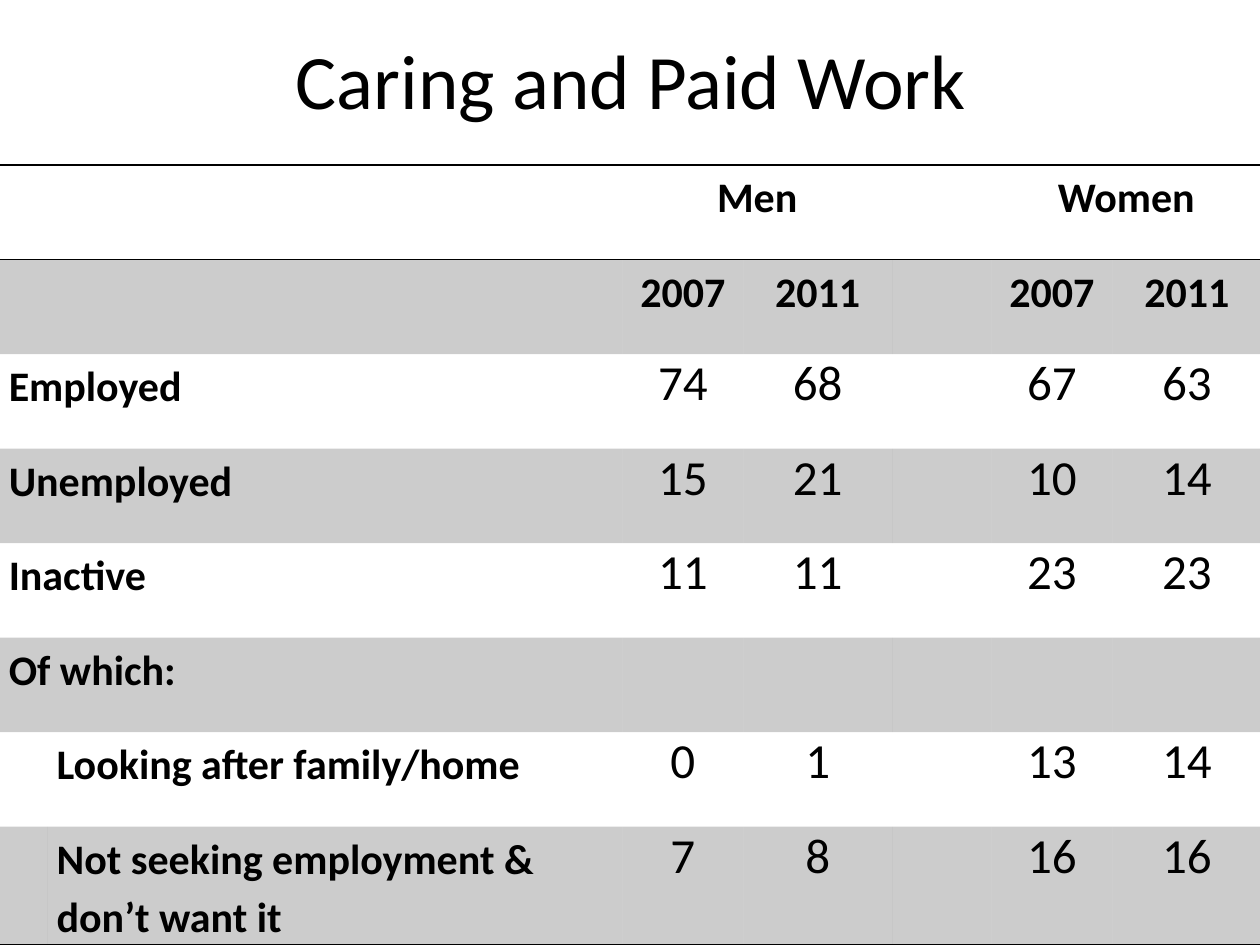
from lxml.etree import SubElement
from pptx import Presentation
from pptx.dml.color import RGBColor
from pptx.enum.text import MSO_ANCHOR as Anchor, PP_ALIGN as Align
from pptx.oxml.ns import qn
from pptx.util import Inches, Pt

BLACK = "000000"
NO_STYLE = "{2D5ABB26-0587-4C30-8999-92F81FD0307C}"
COLUMNS = [0.38, 4.56, 0.96, 1.18, 0.79, 0.96, 1.18]
HEIGHTS = [0.75] * 7 + [0.94]
ROWS = [
    ["", "", "Men", "", "", "Women", ""],
    ["", "", "2007", "2011", "", "2007", "2011"],
    ["Employed", "", "74", "68", "", "67", "63"],
    ["Unemployed", "", "15", "21", "", "10", "14"],
    ["Inactive", "", "11", "11", "", "23", "23"],
    ["Of which:", "", "", "", "", "", ""],
    ["", "Looking after family/home", "0", "1", "", "13", "14"],
    ["", "Not seeking employment & don’t want it", "7", "8", "", "16", "16"],
]
SPANS = [(0, 2), (0, 5)] + [(row, 0) for row in range(6)]


def color(value):
    return RGBColor.from_string(value)


class SlideBuilder:
    """Holds the table and text style and the slide being built."""

    def __init__(self, page, font="Calibri", ink=BLACK):
        self.page, self.font, self.ink = page, font, ink

    def add_text(self, para, text, size, bold=False, align=Align.CENTER):
        para.alignment = align
        span = para.add_run()
        span.text = text
        span.font.name, span.font.size, span.font.bold = self.font, Pt(size), bold
        span.font.color.rgb = color(self.ink)

    def title(self, text, left, top, width, height):
        box = self.page.shapes.add_textbox(*map(Inches, (left, top, width, height)))
        frame = box.text_frame
        frame.word_wrap = True
        frame.vertical_anchor = Anchor.MIDDLE
        self.add_text(frame.paragraphs[0], text, 44)

    def border(self, cell, side):
        line = SubElement(cell._tc.get_or_add_tcPr(), qn(f"a:ln{side}"), w=str(Pt(1)))
        SubElement(SubElement(line, qn("a:solidFill")), qn("a:srgbClr"), val=self.ink)

    def shade(self, cell, percent):
        cell.fill.solid()
        cell.fill.fore_color.rgb = color(self.ink)
        tint = cell._tc.tcPr.find(qn("a:solidFill")).find(qn("a:srgbClr"))
        SubElement(tint, qn("a:alpha"), val=str(percent * 1000))

    def cell_text(self, cell, text, row, column):
        cell.margin_left = cell.margin_right = Inches(0.07)
        cell.margin_top = cell.margin_bottom = 0
        para = cell.text_frame.paragraphs[0]
        heading = row < 2 or column < 2
        if heading:
            para.line_spacing, para.space_after = 1.15, Pt(10)
        align = Align.LEFT if column < 2 else Align.CENTER
        self.add_text(para, text, 24 if heading else 28, heading, align)

    def table(self, rows, left, top, columns, heights, spans):
        frame = self.page.shapes.add_table(
            len(rows), len(columns), Inches(left), Inches(top),
            Inches(sum(columns)), Inches(sum(heights)))
        grid = frame.table
        grid.first_row = grid.horz_banding = False
        grid._tbl.tblPr.find(qn("a:tableStyleId")).text = NO_STYLE
        for column, width in zip(grid.columns, columns):
            column.width = Inches(width)
        for row, height in zip(grid.rows, heights):
            row.height = Inches(height)
        for row, column in spans:
            grid.cell(row, column).merge(grid.cell(row, column + 1))
        for row, texts in enumerate(rows):
            for column, text in enumerate(texts):
                cell = grid.cell(row, column)
                if text:
                    self.cell_text(cell, text, row, column)
                if row == 0:
                    self.border(cell, "T")
                if row in (0, len(rows) - 1):
                    self.border(cell, "B")
                if row % 2:
                    self.shade(cell, 20)


def main():
    deck = Presentation()
    deck.slide_width, deck.slide_height = Inches(10), Inches(7.5)
    builder = SlideBuilder(deck.slides.add_slide(deck.slide_layouts[6]))
    builder.title("Caring and Paid Work", 0.51, 0, 9, 1.25)
    builder.table(ROWS, 0, 1.31, COLUMNS, HEIGHTS, SPANS)
    deck.save("out.pptx")


if __name__ == "__main__":
    main()
